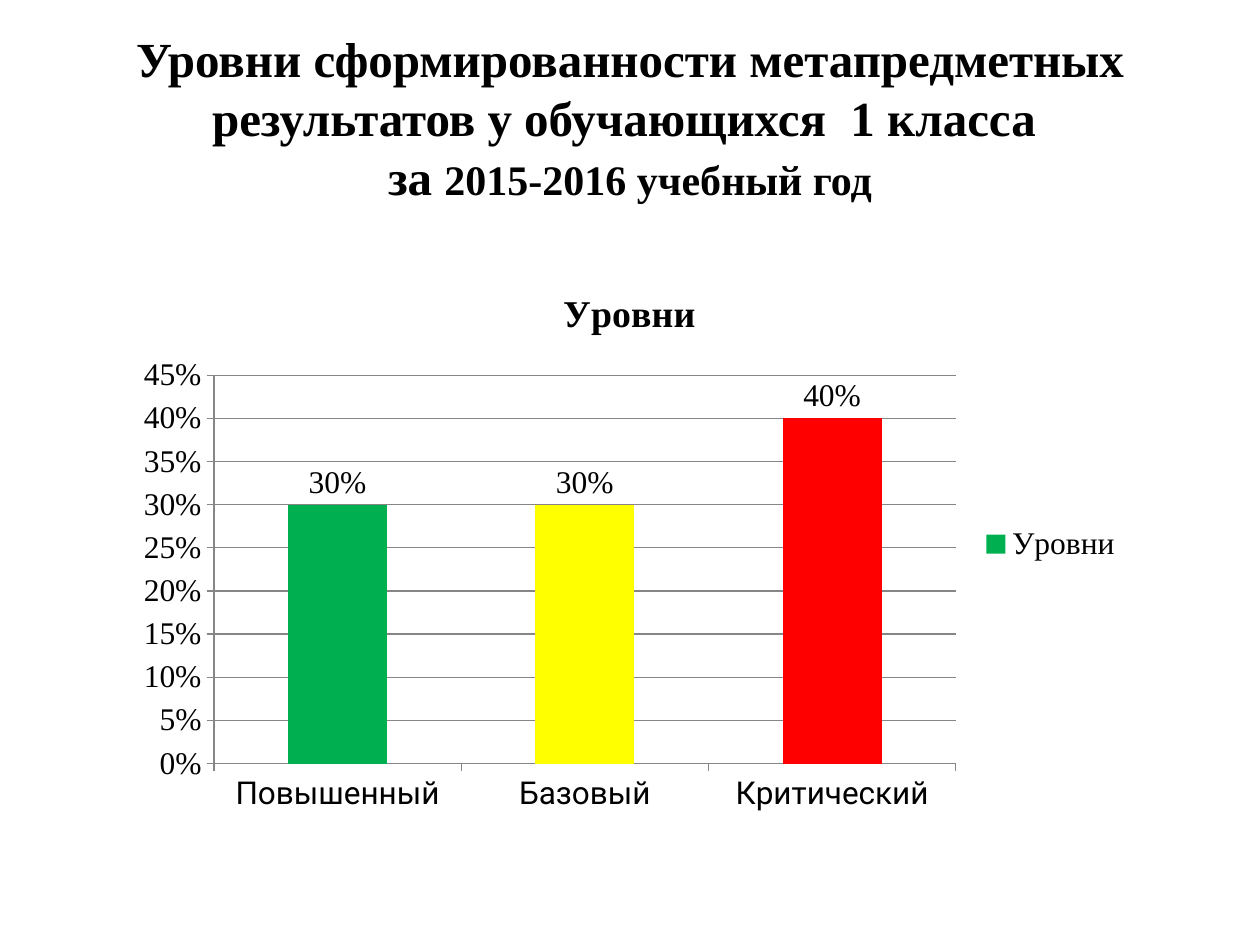
from dataclasses import dataclass

from pptx import Presentation
from pptx.chart.data import CategoryChartData
from pptx.dml.color import RGBColor
from pptx.enum.chart import XL_CHART_TYPE, XL_LABEL_POSITION, XL_LEGEND_POSITION, XL_TICK_MARK
from pptx.enum.text import MSO_ANCHOR, MSO_AUTO_SIZE, PP_ALIGN
from pptx.util import Cm, Pt

HEADING = [
    "Уровни сформированности метапредметных результатов у обучающихся  1 класса ",
    "за ",
]
SCHOOL_YEAR = "2015-2016 учебный год"
SERIES_NAME = "Уровни"
LEVELS = [
    ("Повышенный", 0.3, "00B050"),
    ("Базовый", 0.3, "FFFF00"),
    ("Критический", 0.4, "FF0000"),
]
TITLE_BOX = (Cm(1.27), Cm(0.76), Cm(22.86), Cm(3.18))
CHART_BOX = (Cm(2.49), Cm(5.33), Cm(20.4), Cm(11.28))


@dataclass(frozen=True)
class Theme:
    text: str = "000000"
    line: str = "868686"
    serif: str = "Times New Roman"
    sans: str = "Roboto"
    base: str = "Calibri"
    heading: int = 28
    year: int = 24
    chart_title: float = 21.6
    chart: int = 18


THEME = Theme()


def style_font(font, name, size, bold=False):
    font.name = name
    font.size = Pt(size)
    font.bold = bold
    font.color.rgb = RGBColor.from_string(THEME.text)


def style_line(line):
    line.color.rgb = RGBColor.from_string(THEME.line)
    line.width = Pt(0.75)


def fill_title(title):
    title.left, title.top, title.width, title.height = TITLE_BOX
    frame = title.text_frame
    frame.word_wrap = True
    frame.auto_size = MSO_AUTO_SIZE.NONE
    frame.vertical_anchor = MSO_ANCHOR.MIDDLE
    paragraph = frame.paragraphs[0]
    paragraph.alignment = PP_ALIGN.CENTER
    style_font(paragraph.font, THEME.serif, THEME.heading, True)
    first, second = HEADING
    paragraph.add_run().text = first
    paragraph.add_line_break()
    paragraph.add_run().text = second
    year = paragraph.add_run()
    year.text = SCHOOL_YEAR
    year.font.size = Pt(THEME.year)


def add_levels_chart(slide):
    names, values, colors = zip(*LEVELS)
    data = CategoryChartData(number_format="0%")
    data.categories = names
    data.add_series(SERIES_NAME, values)
    chart = slide.shapes.add_chart(XL_CHART_TYPE.COLUMN_CLUSTERED, *CHART_BOX, data).chart
    style_font(chart.font, THEME.base, THEME.chart)

    chart.has_title = True
    heading = chart.chart_title.text_frame
    heading.text = SERIES_NAME
    style_font(heading.paragraphs[0].font, THEME.serif, THEME.chart_title, True)
    chart.chart_title.include_in_layout = False

    chart.has_legend = True
    chart.legend.position = XL_LEGEND_POSITION.RIGHT
    chart.legend.include_in_layout = False
    style_font(chart.legend.font, THEME.serif, THEME.chart)

    for axis, font_name in ((chart.category_axis, THEME.sans), (chart.value_axis, THEME.serif)):
        style_font(axis.tick_labels.font, font_name, THEME.chart)
        axis.major_tick_mark = XL_TICK_MARK.OUTSIDE
        style_line(axis.format.line)

    value_axis = chart.value_axis
    value_axis.minimum_scale, value_axis.maximum_scale, value_axis.major_unit = 0, 0.45, 0.05
    value_axis.tick_labels.number_format = "0%"
    value_axis.tick_labels.number_format_is_linked = False
    value_axis.has_major_gridlines = True
    style_line(value_axis.major_gridlines.format.line)

    plot = chart.plots[0]
    plot.vary_by_categories = False
    plot.gap_width = 150
    series = plot.series[0]
    for column, color in zip([series, *(series.points[i] for i in range(1, len(colors)))], colors):
        column.format.fill.solid()
        column.format.fill.fore_color.rgb = RGBColor.from_string(color)

    labels = series.data_labels
    labels.show_value = True
    labels.number_format = "0%"
    labels.number_format_is_linked = False
    labels.position = XL_LABEL_POSITION.OUTSIDE_END
    style_font(labels.font, THEME.serif, THEME.chart)


def main():
    presentation = Presentation()
    presentation.slide_width, presentation.slide_height = Cm(25.4), Cm(19.05)
    slide = presentation.slides.add_slide(presentation.slide_layouts.get_by_name("Title Only"))
    fill_title(slide.shapes.title)
    add_levels_chart(slide)
    presentation.save("out.pptx")


if __name__ == "__main__":
    main()
